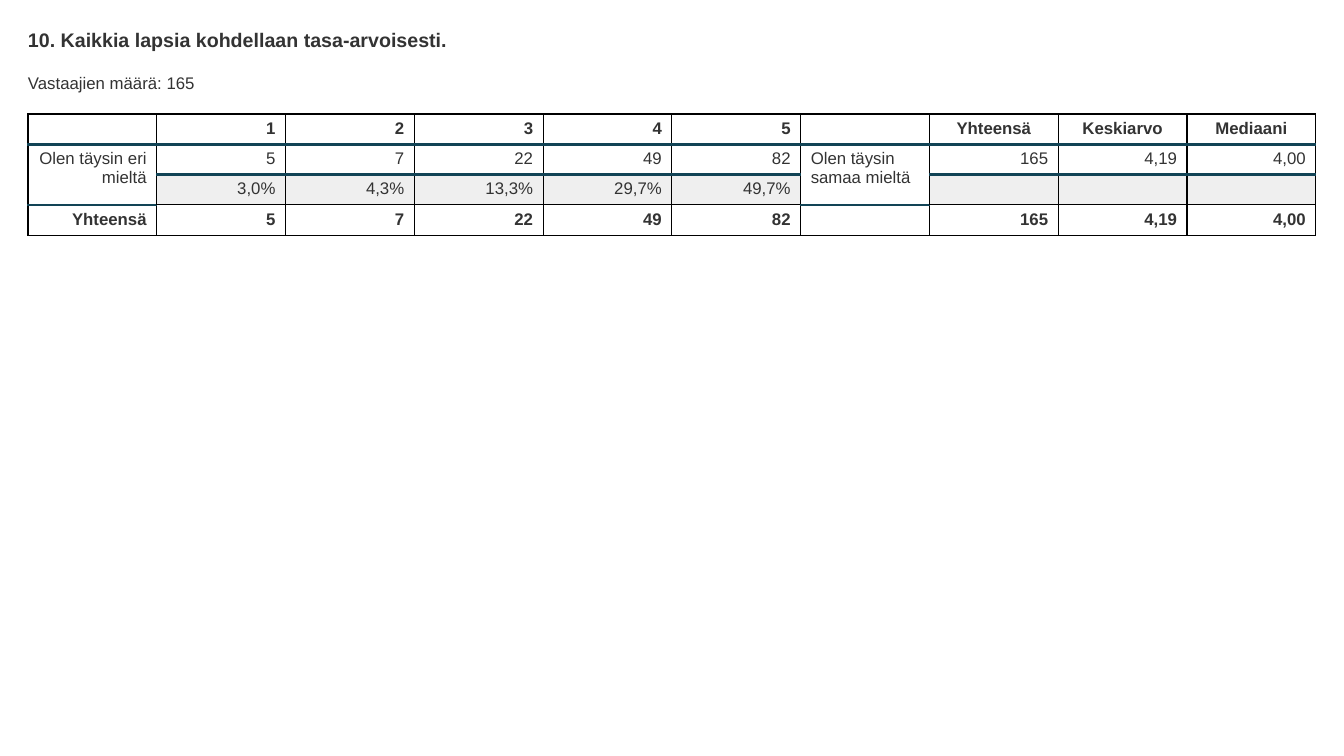
"""Build a survey result slide: a heading, the respondent count and a distribution table."""
import lxml.etree
import pptx
import pptx.dml.color
import pptx.enum.text
import pptx.oxml.ns
import pptx.util

HEADING = "10. Kaikkia lapsia kohdellaan tasa-arvoisesti."
RESPONDENTS = "Vastaajien määrä: 165"
ROWS = [
    ["", "1", "2", "3", "4", "5", "", "Yhteensä", "Keskiarvo", "Mediaani"],
    ["Olen täysin eri mieltä", "5", "7", "22", "49", "82",
     "Olen täysin samaa mieltä", "165", "4,19", "4,00"],
    ["", "3,0%", "4,3%", "13,3%", "29,7%", "49,7%", "", "", "", ""],
    ["Yhteensä", "5", "7", "22", "49", "82", "", "165", "4,19", "4,00"],
]
HEADER_ROW, COUNT_ROW, PERCENT_ROW, TOTAL_ROW = range(4)
STATEMENT_COLUMNS = (0, 6)
SUMMARY_START = 7

INK = pptx.dml.color.RGBColor(0x33, 0x33, 0x33)
BLACK = pptx.dml.color.RGBColor(0x00, 0x00, 0x00)
TEAL = pptx.dml.color.RGBColor(0x12, 0x44, 0x56)
SHADE = pptx.dml.color.RGBColor(0xEF, 0xEF, 0xEF)
FONT = "Arial"
ALIGN = pptx.enum.text.PP_ALIGN

SLIDE_W, SLIDE_H = 1344, 756
MARGIN, CONTENT_W = 28, 1288
HEADING_TOP, HEADING_H = 28, 23
RESPONDENTS_TOP, RESPONDENTS_H = 73, 20
TABLE_TOP, TABLE_H = 114, 121


def px(length):
    return round(length * 914400 / 100.8)


def write(frame, text, size=12, bold=False, align=ALIGN.LEFT):
    paragraph = frame.paragraphs[0]
    paragraph.alignment = align
    if not text:
        ending = lxml.etree.SubElement(paragraph._p, pptx.oxml.ns.qn("a:endParaRPr"))
        ending.set("sz", str(size * 100))
        return
    run = paragraph.add_run()
    run.text = text
    run.font.name = FONT
    run.font.size = pptx.util.Pt(size)
    run.font.bold = bold
    run.font.color.rgb = INK


def add_line(slide, text, top, height, **text_format):
    box = slide.shapes.add_textbox(px(MARGIN), px(top), px(CONTENT_W), px(height))
    frame = box.text_frame
    frame.word_wrap = True
    frame.margin_left = frame.margin_right = frame.margin_top = frame.margin_bottom = 0
    write(frame, text, **text_format)


def draw_border(cell, side, color, points):
    border = lxml.etree.SubElement(
        cell._tc.get_or_add_tcPr(), pptx.oxml.ns.qn(f"a:ln{side}"),
        w=str(pptx.util.Pt(points)))
    solid = lxml.etree.SubElement(border, pptx.oxml.ns.qn("a:solidFill"))
    lxml.etree.SubElement(solid, pptx.oxml.ns.qn("a:srgbClr"), val=str(color))


def rule_below(row, column):
    last_count_row = PERCENT_ROW if column in STATEMENT_COLUMNS else COUNT_ROW
    if row in (HEADER_ROW, last_count_row):
        return TEAL, 2
    if column in STATEMENT_COLUMNS and row == COUNT_ROW:
        return TEAL, 2
    return BLACK, 1


def cell_align(row, column):
    if row == HEADER_ROW and column >= SUMMARY_START:
        return ALIGN.CENTER
    if column == STATEMENT_COLUMNS[1]:
        return ALIGN.LEFT
    return ALIGN.RIGHT


def add_distribution(slide):
    column_count = len(ROWS[0])
    frame = slide.shapes.add_table(len(ROWS), column_count, px(MARGIN), px(TABLE_TOP),
                                   px(CONTENT_W), px(TABLE_H))
    distribution = frame.table
    distribution.first_row = distribution.horz_banding = False
    for column in distribution.columns:
        column.width = px(CONTENT_W) // column_count
    for row in distribution.rows:
        row.height = px(TABLE_H) // len(ROWS)

    for r, values in enumerate(ROWS):
        for c, value in enumerate(values):
            cell = distribution.cell(r, c)
            write(cell.text_frame, value, bold=r in (HEADER_ROW, TOTAL_ROW),
                  align=cell_align(r, c))
            draw_border(cell, "L", BLACK, 1)
            draw_border(cell, "R", BLACK, 1)
            draw_border(cell, "T", *rule_below(r - 1, c))
            draw_border(cell, "B", *rule_below(r, c))
            if r == PERCENT_ROW and c not in STATEMENT_COLUMNS:
                cell.fill.solid()
                cell.fill.fore_color.rgb = SHADE
            else:
                cell.fill.background()

    for c in STATEMENT_COLUMNS:
        distribution.cell(COUNT_ROW, c).merge(distribution.cell(PERCENT_ROW, c))


def main():
    deck = pptx.Presentation()
    deck.slide_width, deck.slide_height = px(SLIDE_W), px(SLIDE_H)
    slide = deck.slides.add_slide(deck.slide_layouts[6])
    add_line(slide, HEADING, HEADING_TOP, HEADING_H, size=14, bold=True)
    add_line(slide, RESPONDENTS, RESPONDENTS_TOP, RESPONDENTS_H)
    add_distribution(slide)
    deck.save("out.pptx")


if __name__ == "__main__":
    main()
